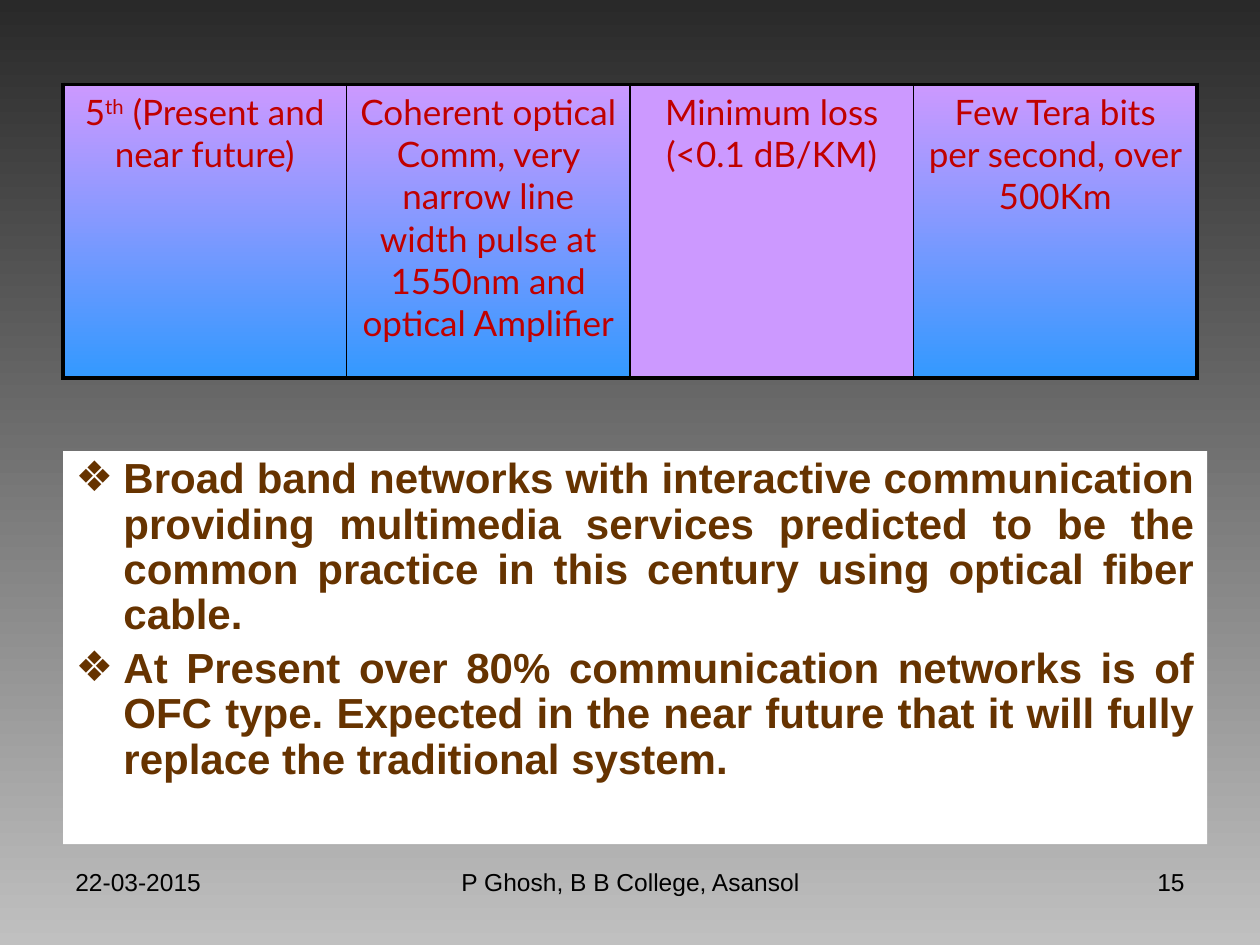
from lxml import etree
from pptx import Presentation
from pptx.dml.color import RGBColor
from pptx.enum.text import MSO_ANCHOR, MSO_AUTO_SIZE, PP_ALIGN
from pptx.oxml.ns import qn
from pptx.util import Inches, Pt

LEFT, MID, RIGHT = PP_ALIGN.LEFT, PP_ALIGN.CENTER, PP_ALIGN.RIGHT
JUST = PP_ALIGN.JUSTIFY
TOP = MSO_ANCHOR.TOP
FIXED = MSO_AUTO_SIZE.NONE

THEME = {
    "back": ("292929", "C0C0C0"), "cell": ("CC99FF", "3399FF"),
    "panel": "FFFFFF", "line": "000000",
    "foot": ("Arial", 14, "000000", False),
    "grid": ("Lato", 20, "C00000", False),
    "body": ("Arial", 24, "663300", True),
}


def style(para, look, align):
    name, size, color, bold = THEME[look]
    para.alignment = align
    font = para.font
    font.name, font.size, font.bold = name, Pt(size), bold
    font.color.rgb = RGBColor.from_string(color)


def fade(fill, colors):
    """Fill with a gradient running from top to bottom."""
    fill.gradient()
    fill.gradient_angle = 270
    for stop, color in zip(fill.gradient_stops, colors):
        stop.color.rgb = RGBColor.from_string(color)


deck = Presentation()
wide, high = deck.slide_width, deck.slide_height = Inches(10), Inches(7.5)
edge = int(wide * 0.05)
slide = deck.slides.add_slide(deck.slide_layouts[1])
title = slide.shapes.title
title.element.getparent().remove(title.element)
fade(slide.background.fill, THEME["back"])

# Footer: text, left and width in inches, alignment
for text, left, width, align in (
    ("22-03-2015", 0.5, 2.33, LEFT),
    ("P Ghosh, B B College, Asansol", 3.42, 3.17, MID),
    ("15", 7.17, 2.33, RIGHT),
):
    box = slide.shapes.add_textbox(
        Inches(left), Inches(6.83), Inches(width), Inches(0.52))
    box.text_frame.word_wrap = True
    para = box.text_frame.paragraphs[0]
    para.text = text
    style(para, "foot", align)

# Table: each cell is a list of (text, baseline) runs
cells = (
    [("5", 0), ("th", 30000), (" (Present and near future)", 0)],
    [("Coherent optical Comm, very narrow line width pulse at 1550nm "
      "and optical Amplifier", 0)],
    [("Minimum loss (<0.1 dB/KM)", 0)],
    [("Few Tera bits per second, over 500Km", 0)],
)
last = len(cells) - 1
table = slide.shapes.add_table(
    1, len(cells), edge, Inches(0.67), wide - 2 * edge, Inches(2.33)).table
table.first_row = table.horz_banding = False
for col, runs in enumerate(cells):
    cell = table.cell(0, col)
    para = cell.text_frame.paragraphs[0]
    para.space_before = Pt(4)
    style(para, "grid", MID)
    for text, base in runs:
        run = para.add_run()
        run.text = text
        if base:
            run.font._element.set("baseline", str(base))
    if col == 2:
        cell.fill.solid()
        cell.fill.fore_color.rgb = RGBColor.from_string(THEME["cell"][0])
    else:
        fade(cell.fill, THEME["cell"])
    sides = {"lnL": 2.25 if col == 0 else 1, "lnR": 2.25 if col == last else 1,
             "lnT": 2.25, "lnB": 2.25}
    props = cell._tc.get_or_add_tcPr()
    for spot, (side, width) in enumerate(sides.items()):
        line = etree.Element(qn("a:" + side), w=str(Pt(width)))
        paint = etree.SubElement(line, qn("a:solidFill"))
        etree.SubElement(paint, qn("a:srgbClr"), val=THEME["line"])
        props.insert(spot, line)

# Body panel
body = slide.placeholders[1]
body.left, body.top = edge, Inches(3.58)
body.width, body.height = Inches(9.08), Inches(3.12)
body.fill.solid()
body.fill.fore_color.rgb = RGBColor.from_string(THEME["panel"])
frame = body.text_frame
frame.auto_size, frame.vertical_anchor = FIXED, TOP
points = (
    "Broad band networks with interactive communication providing multimedia "
    "services predicted to be the common practice in this century using "
    "optical fiber cable.",
    "At Present over 80% communication networks is of OFC type. Expected in "
    "the near future that it will fully replace the traditional system.",
)
frame.text = "\n".join(points)
for para in frame.paragraphs:
    props = para._p.get_or_add_pPr()
    props.set("marL", str(Inches(0.38)))
    props.set("indent", str(-Inches(0.38)))
    etree.SubElement(props, qn("a:buChar"), char="❖")
    para.line_spacing, para.space_before = 0.9, Pt(4.8)
    style(para, "body", JUST)

deck.save("out.pptx")
